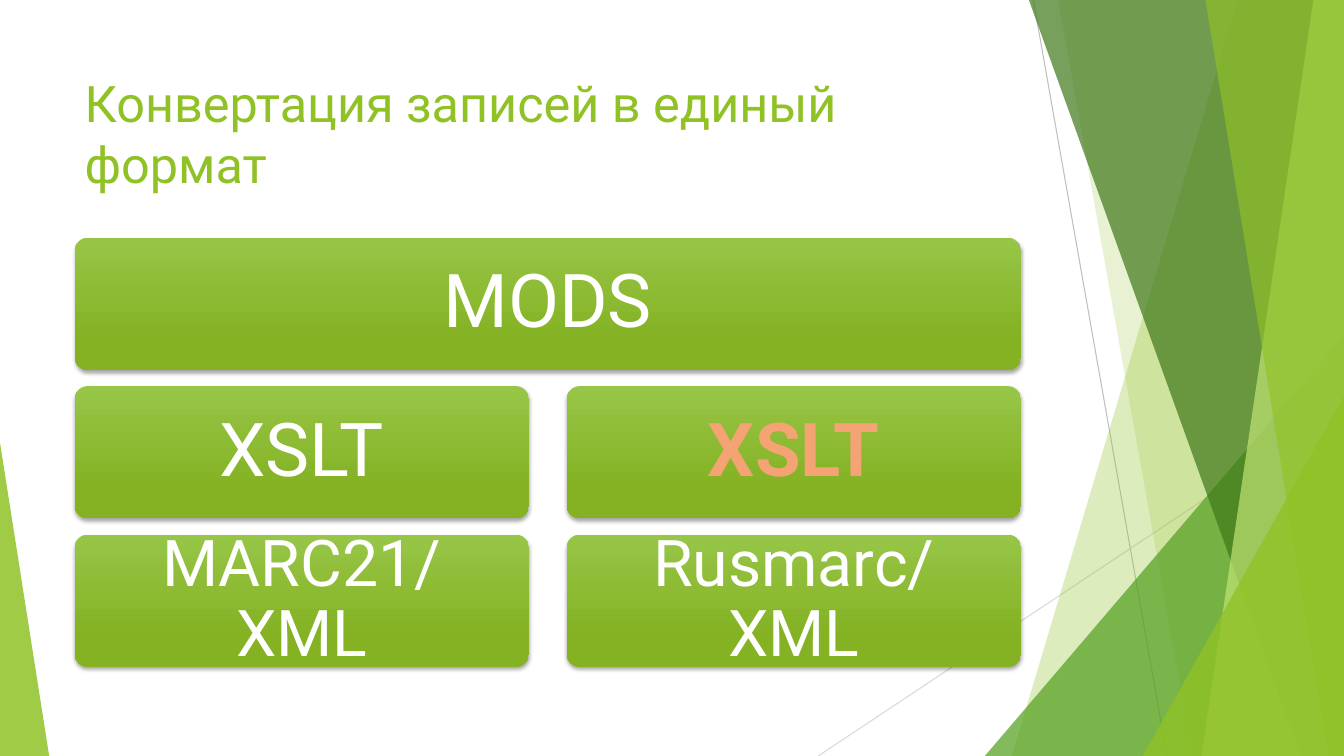
from lxml.etree import SubElement
from pptx import Presentation
from pptx.dml.color import RGBColor
from pptx.enum.shapes import MSO_CONNECTOR as Connector, MSO_SHAPE as Shape
from pptx.enum.text import MSO_ANCHOR as Anchor, MSO_AUTO_SIZE as AutoSize, PP_ALIGN as Align
from pptx.oxml.ns import qn
from pptx.util import Cm, Pt

WIDTH, HEIGHT = 33.87, 19.05
LEFT, TOP = 1.88, 5.99
FULL_WIDTH, HALF_WIDTH = 23.85, 11.45
BOX_HEIGHT, ROW_STEP = 3.33, 3.74

RAYS = [(26.04, 0, 29.41, HEIGHT, "BFBFBF"), (WIDTH, 10.24, 20.62, HEIGHT, "D9D9D9")]
BACK_BANDS = [(31.19, 25.5, "90C226", 30), (26.67, 30.05, "90C226", 20)]
FRONT_BANDS = [(25.93, 32.79, "3F7819", 70), (33.1, 30.28, "C0E474", 70),
               (30.38, 33.48, "90C226", 65)]
BOX_ROWS = [
    [("MODS", {"size": 53})],
    [("XSLT", {"size": 53}), ("XSLT", {"size": 53, "color": "F4A374", "bold": True})],
    [("MARC21/XML", {"size": 46}), ("Rusmarc/XML", {"size": 46})],
]


def rgb(value):
    return RGBColor.from_string(value)


def write(frame, text, size, color="FFFFFF", bold=False, align=Align.CENTER,
          anchor=Anchor.MIDDLE, spacing=0.9):
    frame.word_wrap = True
    frame.auto_size = AutoSize.NONE
    frame.vertical_anchor = anchor
    paragraph = frame.paragraphs[0]
    paragraph.alignment = align
    paragraph.line_spacing = spacing
    run = paragraph.add_run()
    run.text = text
    run.font.name = "Roboto"
    run.font.size = Pt(size)
    run.font.bold = bold
    run.font.color.rgb = rgb(color)


def paint(shape, color, opacity):
    shape.shadow.inherit = False
    shape.line.fill.background()
    shape.fill.solid()
    shape.fill.fore_color.rgb = rgb(color)
    tone = shape.fill._xPr.find(qn("a:solidFill"))[0]
    SubElement(tone, qn("a:alpha"), val=str(opacity * 1000))


def add_ray(slide, x1, y1, x2, y2, color):
    ray = slide.shapes.add_connector(Connector.STRAIGHT, Cm(x1), Cm(y1), Cm(x2), Cm(y2))
    ray.line.color.rgb = rgb(color)
    ray.line.width = Pt(0.75)
    SubElement(ray._element.spPr, qn("a:effectLst"))


def add_band(slide, top_x, bottom_x, color, opacity):
    outline = slide.shapes.build_freeform(Cm(top_x), Cm(0))
    corners = [(WIDTH, 0), (WIDTH, HEIGHT), (bottom_x, HEIGHT)]
    outline.add_line_segments([(Cm(x), Cm(y)) for x, y in corners], close=True)
    paint(outline.convert_to_shape(), color, opacity)


def add_wedge(slide, left, top, width, apex, color, opacity):
    wedge = slide.shapes.add_shape(Shape.ISOSCELES_TRIANGLE, Cm(left), Cm(top),
                                   Cm(width), Cm(HEIGHT - top))
    wedge.adjustments[0] = apex
    paint(wedge, color, opacity)


def add_shadow(shape):
    shape.shadow.inherit = False
    effects = shape._element.spPr.find(qn("a:effectLst"))
    shadow = SubElement(effects, qn("a:outerShdw"), blurRad=str(Pt(3)), dist=str(Pt(2)),
                        dir="5400000", algn="ctr", rotWithShape="0")
    tone = SubElement(shadow, qn("a:srgbClr"), val="000000")
    SubElement(tone, qn("a:alpha"), val="35000")


def add_box(slide, left, top, width, text, text_format):
    box = slide.shapes.add_shape(Shape.ROUNDED_RECTANGLE, Cm(left), Cm(top),
                                 Cm(width), Cm(BOX_HEIGHT))
    box.adjustments[0] = 0.1
    box.line.fill.background()
    box.fill.gradient()
    box.fill.gradient_angle = 270
    for stop, (position, color) in zip(box.fill.gradient_stops,
                                       [(0, "97C547"), (0.78, "84B223")]):
        stop.position = position
        stop.color.rgb = rgb(color)
    add_shadow(box)
    frame = box.text_frame
    frame.margin_left = frame.margin_right = Cm(0.65)
    frame.margin_top = frame.margin_bottom = Cm(0)
    write(frame, text, **text_format)


def add_backdrop(slide):
    for ray in RAYS:
        add_ray(slide, *ray)
    for band in BACK_BANDS:
        add_band(slide, *band)
    add_wedge(slide, 24.82, 8.46, 9.05, 1, "54A021", 72)
    for band in FRONT_BANDS:
        add_band(slide, *band)
    add_wedge(slide, 28.8, 9.98, 5.07, 1, "90C226", 80)
    add_wedge(slide, 0, 11.15, 1.24, 0, "90C226", 85)


def add_title(slide, text):
    title = slide.shapes.title
    title.left, title.top, title.width, title.height = Cm(1.88), Cm(1.7), Cm(23.88), Cm(3.66)
    write(title.text_frame, text, size=36, color="90C226", align=Align.LEFT,
          anchor=Anchor.TOP, spacing=1.0)


def main():
    deck = Presentation()
    deck.slide_width, deck.slide_height = Cm(WIDTH), Cm(HEIGHT)
    slide = deck.slides.add_slide(deck.slide_layouts[5])
    add_backdrop(slide)
    add_title(slide, "Конвертация записей в единый формат")
    for row, boxes in enumerate(BOX_ROWS):
        width = FULL_WIDTH if len(boxes) == 1 else HALF_WIDTH
        for column, (text, text_format) in enumerate(boxes):
            left = LEFT + column * (FULL_WIDTH - HALF_WIDTH)
            add_box(slide, left, TOP + row * ROW_STEP, width, text, text_format)
    deck.save("out.pptx")


if __name__ == "__main__":
    main()
